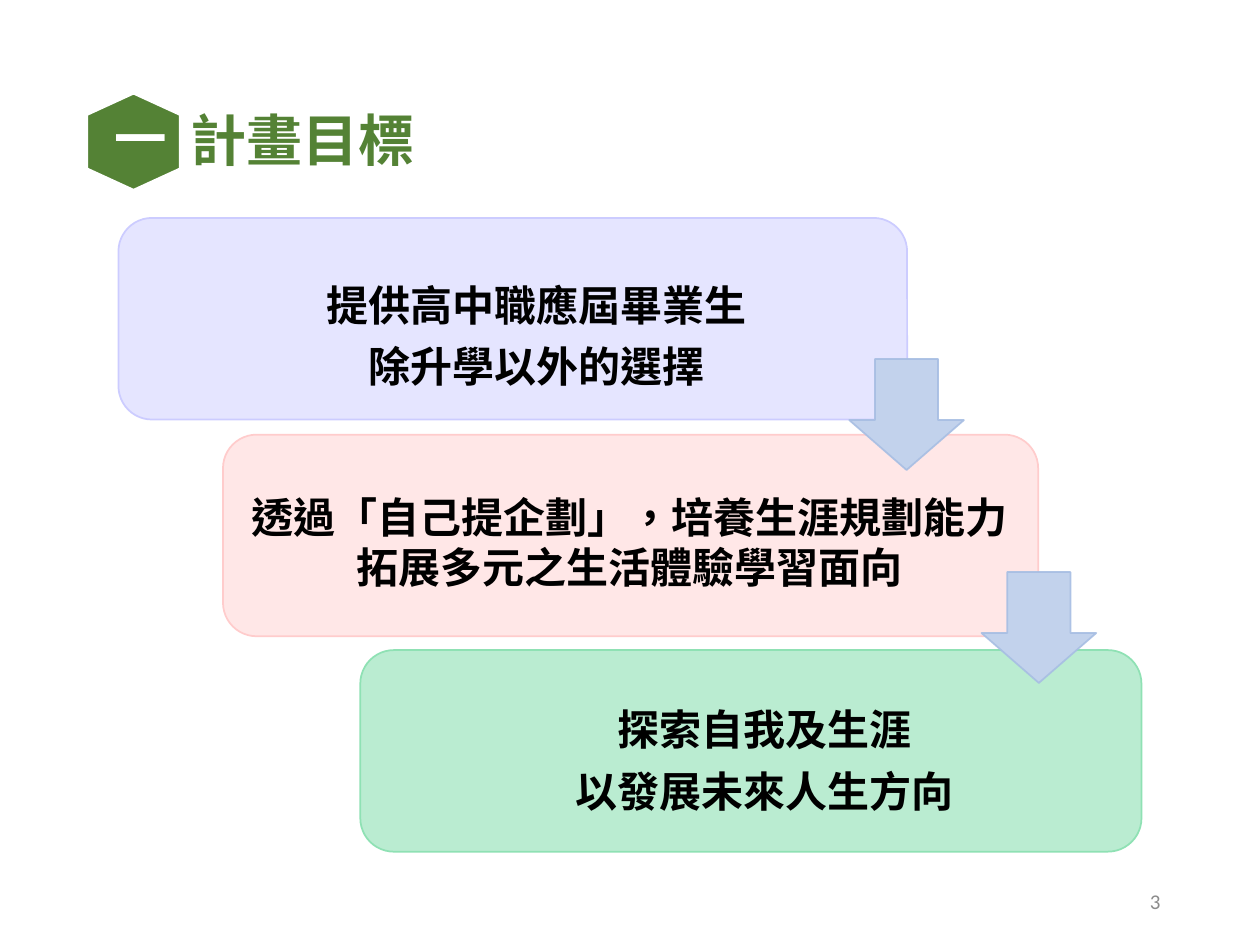
from lxml import etree
from pptx import Presentation
from pptx.dml.color import RGBColor
from pptx.enum.shapes import MSO_SHAPE
from pptx.enum.text import MSO_ANCHOR, MSO_AUTO_SIZE, PP_ALIGN
from pptx.oxml.ns import qn
from pptx.util import Inches, Pt

ROUND, ARROW = MSO_SHAPE.ROUNDED_RECTANGLE, MSO_SHAPE.DOWN_ARROW
LEFT, CENTER, RIGHT = PP_ALIGN.LEFT, PP_ALIGN.CENTER, PP_ALIGN.RIGHT
MIDDLE, TOP = MSO_ANCHOR.MIDDLE, MSO_ANCHOR.TOP
NO_FIT = MSO_AUTO_SIZE.NONE

CJK, LATIN = "Noto Sans CJK SC", "Calibri"
COLORS = {
    "green": "548235", "white": "FFFFFF", "black": "000000", "gray": "8C8C8C",
    "lilac": "E5E5FF", "lilac_edge": "CCCCFF",
    "pink": "FFE7E7", "pink_edge": "FFCCCC",
    "mint": "BAECD1", "mint_edge": "8FE1B4",
    "blue": "C2D2EC", "blue_edge": "A7BEE3",
}
# card: left, top, width, fill; text: left, top, width, height, wrap, line pitch
STEPS = [
    ((0.94, 1.73, 6.26, "lilac"), (2.47, 2.08, 3.57, 1.04, False, Pt(35)),
     ["提供高中職應屆畢業生", "除升學以外的選擇"]),
    ((1.77, 3.45, 6.47, "pink"), (1.89, 3.85, 6.21, 0.91, True, None),
     ["透過「自己提企劃」，培養生涯規劃能力拓展多元之生活體驗學習面向"]),
    ((2.86, 5.16, 6.2, "mint"), (3.9, 5.45, 4.33, 1.05, True, Pt(35)),
     ["探索自我及生涯", "以發展未來人生方向"]),
]
CARD_H = 1.6
ARROWS = [(6.74, 2.85), (7.79, 4.54)]


def rgb(name):
    return RGBColor.from_string(COLORS[name])


def set_all(obj, values):
    for key, value in values.items():
        setattr(obj, key, value)


def paint(shape, fill, edge, width):
    shape.shadow.inherit = False
    shape.fill.solid()
    shape.fill.fore_color.rgb = rgb(fill)
    shape.line.color.rgb = rgb(edge)
    shape.line.width = Pt(width)


def write(shape, lines, size, color, face=CJK, bold=True, align=CENTER,
          pitch=None, **frame):
    """Fill a shape with one paragraph per line; frame holds text frame values."""
    box = shape.text_frame
    set_all(box, {"word_wrap": True, "auto_size": NO_FIT, **frame})
    box.text = "\n".join(lines)
    for para in box.paragraphs:
        set_all(para, {"alignment": align, "line_spacing": pitch})
        font = para.runs[0].font
        set_all(font, {"size": Pt(size), "bold": bold, "name": face})
        font.color.rgb = rgb(color)
        props = para.runs[0]._r.get_or_add_rPr()
        props.set("lang", "zh-TW")
        etree.SubElement(props, qn("a:ea"), typeface=face)


def margins(side, end):
    return {"margin_left": Inches(side), "margin_right": Inches(side),
            "margin_top": Inches(end), "margin_bottom": Inches(end)}


def add_text(slide, area, lines, size, color, **style):
    box = slide.shapes.add_textbox(*map(Inches, area))
    write(box, lines, size, color, **style)


def add_title(slide, text):
    title = slide.shapes.title
    names = ("left", "top", "width", "height")
    set_all(title, dict(zip(names, map(Inches, (1.46, 0.79, 3.37, 0.7)))))
    write(title, [text], 32, "green", align=LEFT, pitch=0.9,
          vertical_anchor=MIDDLE, **margins(0.05, 0.05))


def add_badge(slide, text):
    """Draw the upright hexagon with the section number."""
    # Freeform points are whole numbers, so they are in hundredths of an inch.
    left, mid, right = 69, 106, 143
    points = [(right, 91), (right, 134), (mid, 151), (left, 134), (left, 91)]
    path = slide.shapes.build_freeform(mid, 74, scale=Inches(0.01))
    path.add_line_segments(points, close=True)
    badge = path.convert_to_shape()
    paint(badge, "green", "white", 1.5)
    write(badge, [text], 30, "white", pitch=0.9,
          vertical_anchor=MIDDLE, **margins(0.22, 0.24))


def add_card(slide, left, top, width, tone):
    area = map(Inches, (left, top, width, CARD_H))
    card = slide.shapes.add_shape(ROUND, *area)
    paint(card, tone, tone + "_edge", 1)


def add_arrow(slide, left, top):
    area = map(Inches, (left, top, 0.91, 0.88))
    arrow = slide.shapes.add_shape(ARROW, *area)
    arrow.adjustments[0], arrow.adjustments[1] = 0.55, 0.45
    paint(arrow, "blue", "blue_edge", 1)
    edge = arrow.line.color._xFill.find(qn("a:srgbClr"))
    etree.SubElement(edge, qn("a:alpha"), val="90000")


def main():
    deck = Presentation()
    deck.slide_width, deck.slide_height = Inches(10), Inches(7.5)
    slide = deck.slides.add_slide(deck.slide_layouts[5])
    add_title(slide, "計畫目標")
    add_badge(slide, "一")
    for card, _, _ in STEPS:
        add_card(slide, *card)
    for _, (*area, wrap, pitch), lines in STEPS:
        add_text(slide, area, lines, 24, "black", pitch=pitch,
                 word_wrap=wrap, vertical_anchor=TOP)
    for spot in ARROWS:
        add_arrow(slide, *spot)
    add_text(slide, (7.06, 6.95, 2.25, 0.4), ["3"], 12, "gray", face=LATIN,
             bold=False, align=RIGHT, vertical_anchor=MIDDLE)
    deck.save("out.pptx")


if __name__ == "__main__":
    main()
